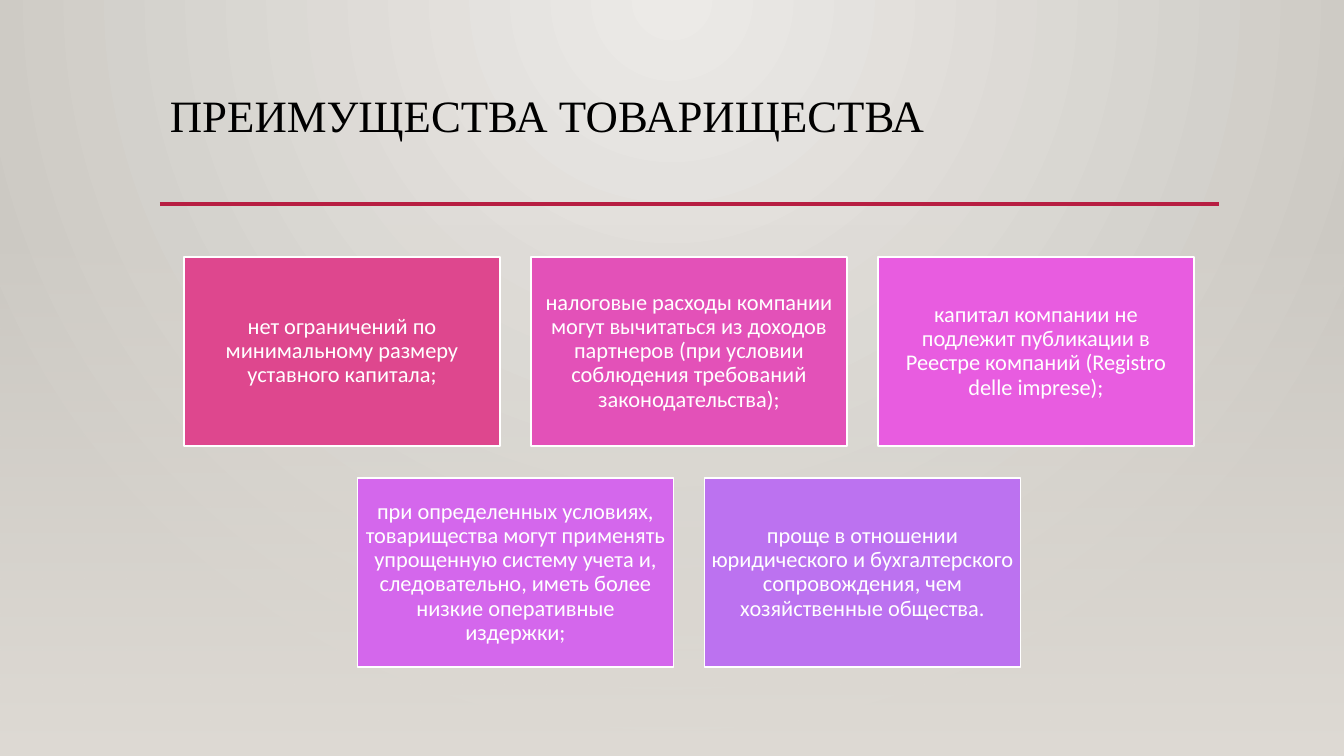
from pptx import Presentation
from pptx.dml.color import RGBColor
from pptx.enum.shapes import MSO_CONNECTOR, MSO_SHAPE
from pptx.enum.text import MSO_ANCHOR, PP_ALIGN
from pptx.oxml.ns import qn
from pptx.util import Pt
from lxml.etree import SubElement

SCALE = 914400 / 100.8
COLORS = {
    "glow": "ECEAE7",
    "edge": "CAC7C1",
    "floor": "DFDBD5",
    "rule": "B71E42",
    "title": "000000",
    "white": "FFFFFF",
}
CARD_WIDTH, CARD_HEIGHT, CARD_GAP = 316, 189, 31
CARDS_CENTER, CARDS_TOP = 689, 257
CARD_ROWS = [
    [
        ("DE478E", "нет ограничений по минимальному размеру уставного капитала;"),
        ("E351B8", "налоговые расходы компании могут вычитаться из доходов партнеров "
                   "(при условии соблюдения требований законодательства);"),
        ("E85CE0", "капитал компании не подлежит публикации в Реестре компаний "
                   "(Registro delle imprese);"),
    ],
    [
        ("D467EC", "при определенных условиях, товарищества могут применять упрощенную "
                   "систему учета и, следовательно, иметь более низкие оперативные издержки;"),
        ("BC72F0", "проще в отношении юридического и бухгалтерского сопровождения, "
                   "чем хозяйственные общества."),
    ],
]


def px(value):
    return round(value * SCALE)


def write(frame, text, font_name, size, color):
    frame.word_wrap = True
    paragraph = frame.paragraphs[0]
    paragraph.text = text
    paragraph.line_spacing = 0.9
    paragraph.font.name = font_name
    paragraph.font.size = Pt(size)
    paragraph.font.color.rgb = RGBColor.from_string(color)
    return paragraph


presentation = Presentation()
presentation.slide_width = px(1344)
presentation.slide_height = px(756)
slide = presentation.slides.add_slide(presentation.slide_layouts[6])

background = slide.background.fill
background.gradient()
for stop, name in zip(background.gradient_stops, ("glow", "edge")):
    stop.color.rgb = RGBColor.from_string(COLORS[name])
gradient = slide.element.find(".//" + qn("a:gradFill"))
gradient.remove(gradient.find(qn("a:lin")))
radial = SubElement(gradient, qn("a:path"), {"path": "circle"})
SubElement(radial, qn("a:fillToRect"), {"l": "43000", "t": "0", "r": "43000", "b": "100000"})

floor = slide.shapes.add_shape(MSO_SHAPE.RECTANGLE, 0, px(223), px(1344), px(533))
floor.shadow.inherit = False
floor.line.fill.background()
floor.fill.gradient()
floor.fill.gradient_angle = 270
for stop in floor.fill.gradient_stops:
    stop.color.rgb = RGBColor.from_string(COLORS["floor"])
clear_color = floor.element.find(".//" + qn("a:gs")).find(qn("a:srgbClr"))
SubElement(clear_color, qn("a:alpha"), {"val": "0"})

title = slide.shapes.add_textbox(px(160), px(89), px(1058), px(116))
write(title.text_frame, "ПРЕИМУЩЕСТВА ТОВАРИЩЕСТВА", "Times New Roman", 32, COLORS["title"])

rule = slide.shapes.add_connector(MSO_CONNECTOR.STRAIGHT, px(160), px(204), px(1219), px(204))
rule.line.color.rgb = RGBColor.from_string(COLORS["rule"])
rule.line.width = Pt(2.5)
SubElement(rule.element.spPr, qn("a:effectLst"))

for row, cards in enumerate(CARD_ROWS):
    row_width = len(cards) * (CARD_WIDTH + CARD_GAP) - CARD_GAP
    top = CARDS_TOP + row * (CARD_HEIGHT + CARD_GAP + 1)
    for column, (color, text) in enumerate(cards):
        left = CARDS_CENTER - row_width / 2 + column * (CARD_WIDTH + CARD_GAP)
        card = slide.shapes.add_shape(
            MSO_SHAPE.RECTANGLE, px(left), px(top), px(CARD_WIDTH), px(CARD_HEIGHT))
        card.shadow.inherit = False
        card.fill.solid()
        card.fill.fore_color.rgb = RGBColor.from_string(color)
        card.line.color.rgb = RGBColor.from_string(COLORS["white"])
        card.line.width = Pt(1.25)
        frame = card.text_frame
        frame.vertical_anchor = MSO_ANCHOR.MIDDLE
        frame.margin_left = frame.margin_right = px(7)
        frame.margin_top = frame.margin_bottom = px(7)
        paragraph = write(frame, text, "Calibri", 16, COLORS["white"])
        paragraph.alignment = PP_ALIGN.CENTER

presentation.save("out.pptx")
